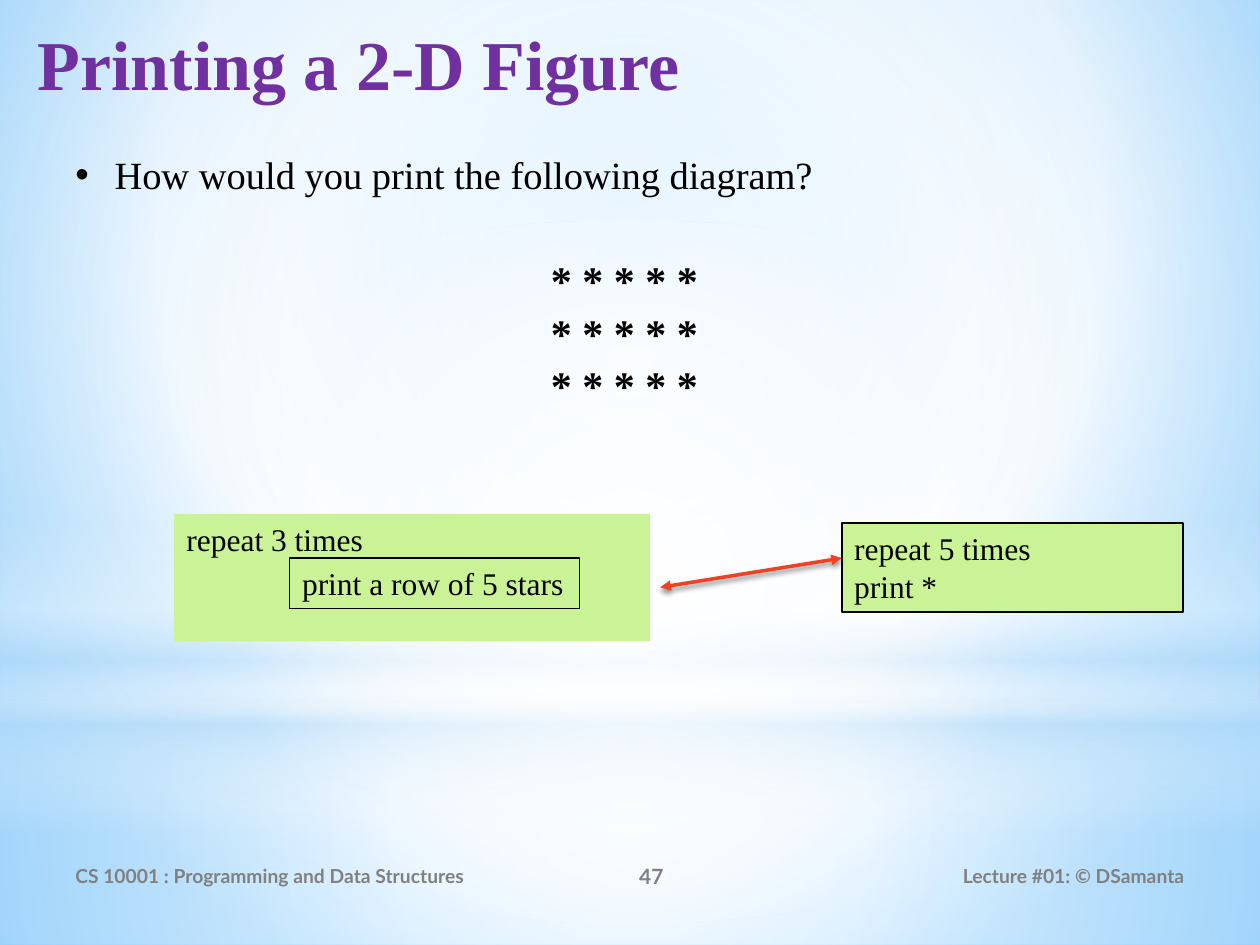
from dataclasses import dataclass

from lxml import etree
from pptx import Presentation
from pptx.dml.color import RGBColor
from pptx.enum.shapes import MSO_CONNECTOR, MSO_SHAPE
from pptx.enum.text import MSO_ANCHOR, PP_ALIGN
from pptx.oxml import parse_xml
from pptx.oxml.ns import nsdecls, qn
from pptx.util import Cm, Pt


@dataclass
class Theme:
    serif: str = "Times New Roman"
    sans: str = "Lato"
    title: str = "7030A0"
    ink: str = "000000"
    footer: str = "808080"
    box: str = "CAF297"
    arrow: str = "F14124"
    white: str = "FFFFFF"
    sky: str = "B4DCFA"
    title_size: float = 40
    star_size: float = 24
    body_size: float = 22
    code_size: float = 18
    number_size: float = 12
    footer_size: float = 11


T = Theme()


def write(tf, text, size=T.code_size, color=T.ink, font=T.serif, bold=False,
          align=PP_ALIGN.LEFT, before=0, first=True):
    p = tf.paragraphs[0] if first else tf.add_paragraph()
    p.alignment, p.space_before = align, Pt(before)
    r = p.add_run()
    r.text = text
    r.font.name, r.font.size, r.font.bold = font, Pt(size), bold
    r.font.color.rgb = RGBColor.from_string(color)
    return p


def paint_gradient(props, stops, rect=None):
    """Swap a solid fill for a circular gradient (rect) or a vertical one."""
    gs = "".join(f'<a:gs pos="{pos * 1000}"><a:srgbClr val="{color}">'
                 f'<a:alpha val="{alpha * 1000}"/></a:srgbClr></a:gs>'
                 for pos, color, alpha in stops)
    if rect:
        sides = " ".join(f'{side}="{v * 1000}"' for side, v in zip("ltrb", rect))
        way = f'<a:path path="circle"><a:fillToRect {sides}/></a:path>'
    else:
        way = '<a:lin ang="5400000" scaled="0"/>'
    solid = props.find(qn("a:solidFill"))
    props.replace(solid, parse_xml(
        f'<a:gradFill {nsdecls("a")} rotWithShape="1"><a:gsLst>{gs}</a:gsLst>{way}</a:gradFill>'))


prs = Presentation()
prs.slide_width, prs.slide_height = Cm(25.4), Cm(19.05)
s = prs.slides.add_slide(prs.slide_layouts[5])

# Background and its soft light layers
s.background.fill.solid()
paint_gradient(s.element.find(".//" + qn("p:bgPr")),
               [(0, "9ED5FF", 100), (60, T.white, 100), (100, "5BB9FF", 100)],
               (20, 10, 20, 60))
CENTRE = (50, 50, 50, 50)
layers = [
    (MSO_SHAPE.RECTANGLE, 14.17, 4.88, CENTRE,
     [(0, T.white, 91), (37, T.white, 76), (100, T.sky, 79)]),
    (MSO_SHAPE.RECTANGLE, 0, 14.17, CENTRE,
     [(0, T.white, 89), (48, T.white, 62), (100, T.sky, 79)]),
    (MSO_SHAPE.RECTANGLE, 10.46, 6.35, None,
     [(0, T.white, 0), (29, T.white, 30), (45, T.sky, 40),
      (55, T.white, 26), (65, T.sky, 60), (100, T.white, 0)]),
    (MSO_SHAPE.OVAL, 4.45, 14.17, CENTRE,
     [(0, T.white, 100), (56, T.white, 0)]),
]
for kind, top, height, rect, stops in layers:
    sp = s.shapes.add_shape(kind, 0, Cm(top), prs.slide_width, Cm(height))
    sp.shadow.inherit = False
    sp.line.fill.background()
    sp.fill.solid()
    paint_gradient(sp.element.spPr, stops, rect)

# Title, raised above the light layers
title = s.shapes.title
title.element.getparent().append(title.element)
title.left, title.top, title.width, title.height = Cm(0.51), Cm(0.13), Cm(24.2), Cm(2.8)
tf = title.text_frame
tf.vertical_anchor, tf.margin_top = MSO_ANCHOR.TOP, Cm(0.28)
write(tf, "Printing a 2-D Figure", size=T.title_size, color=T.title, bold=True)

# Footer
footers = [
    (1.27, 9.32, "CS 10001 : Programming and Data Structures", PP_ALIGN.LEFT, T.footer_size),
    (10.59, 5.08, "47", PP_ALIGN.CENTER, T.number_size),
    (17.15, 6.98, "Lecture #01: © DSamanta", PP_ALIGN.RIGHT, T.footer_size),
]
for left, width, text, align, size in footers:
    tf = s.shapes.add_textbox(Cm(left), Cm(17.15), Cm(width), Cm(1.01)).text_frame
    tf.word_wrap, tf.vertical_anchor = True, MSO_ANCHOR.MIDDLE
    write(tf, text, size=size, color=T.footer, font=T.sans, bold=True, align=align)

# Question and the star diagram
tf = s.shapes.add_textbox(Cm(1.27), Cm(2.92), Cm(22.63), Cm(5.44)).text_frame
tf.word_wrap = True
p = write(tf, "How would you print the following diagram?", size=T.body_size, before=2)
pPr = p._p.get_or_add_pPr()
pPr.set("marL", str(Cm(0.79)))
pPr.set("indent", str(-Cm(0.79)))
etree.SubElement(pPr, qn("a:buFont")).set("typeface", "Arial")
etree.SubElement(pPr, qn("a:buChar")).set("char", "•")
for row in range(3):
    write(tf, "* * * * *", size=T.star_size, bold=True, align=PP_ALIGN.CENTER,
          before=1 if row else 33, first=False)

# Pseudocode boxes
boxes = [
    (3.51, 10.36, 9.6, 2.57, T.box, None, ["repeat 3 times"]),
    (16.97, 10.54, 6.88, 1.8, T.box, 1.25, ["repeat 5 times", "print *"]),
    (5.84, 11.25, 5.84, 1.02, None, 0.75, ["print a row of 5 stars"]),
]
for left, top, width, height, fill, line, texts in boxes:
    sp = s.shapes.add_shape(MSO_SHAPE.RECTANGLE, Cm(left), Cm(top), Cm(width), Cm(height))
    sp.shadow.inherit = False
    if fill:
        sp.fill.solid()
        sp.fill.fore_color.rgb = RGBColor.from_string(fill)
    else:
        sp.fill.background()
    if line:
        sp.line.width = Pt(line)
        sp.line.color.rgb = RGBColor.from_string(T.ink)
    else:
        sp.line.fill.background()
    tf = sp.text_frame
    tf.vertical_anchor, tf.word_wrap = MSO_ANCHOR.TOP, fill is not None
    for i, text in enumerate(texts):
        write(tf, text, first=i == 0)

# Double-headed arrow with a soft shadow
arrow = s.shapes.add_connector(MSO_CONNECTOR.STRAIGHT, Cm(13.31), Cm(11.84), Cm(16.97), Cm(11.25))
arrow.line.width = Pt(2)
arrow.line.color.rgb = RGBColor.from_string(T.arrow)
ln = arrow.line._get_or_add_ln()
for end in ("a:headEnd", "a:tailEnd"):
    etree.SubElement(ln, qn(end)).set("type", "triangle")
arrow.element.spPr.append(parse_xml(
    f'<a:effectLst {nsdecls("a")}><a:outerShdw blurRad="{Pt(3.1)}" dist="{Pt(1.8)}" '
    f'dir="5400000" rotWithShape="0"><a:srgbClr val="{T.ink}"><a:alpha val="45000"/>'
    '</a:srgbClr></a:outerShdw></a:effectLst>'))

prs.save("out.pptx")
